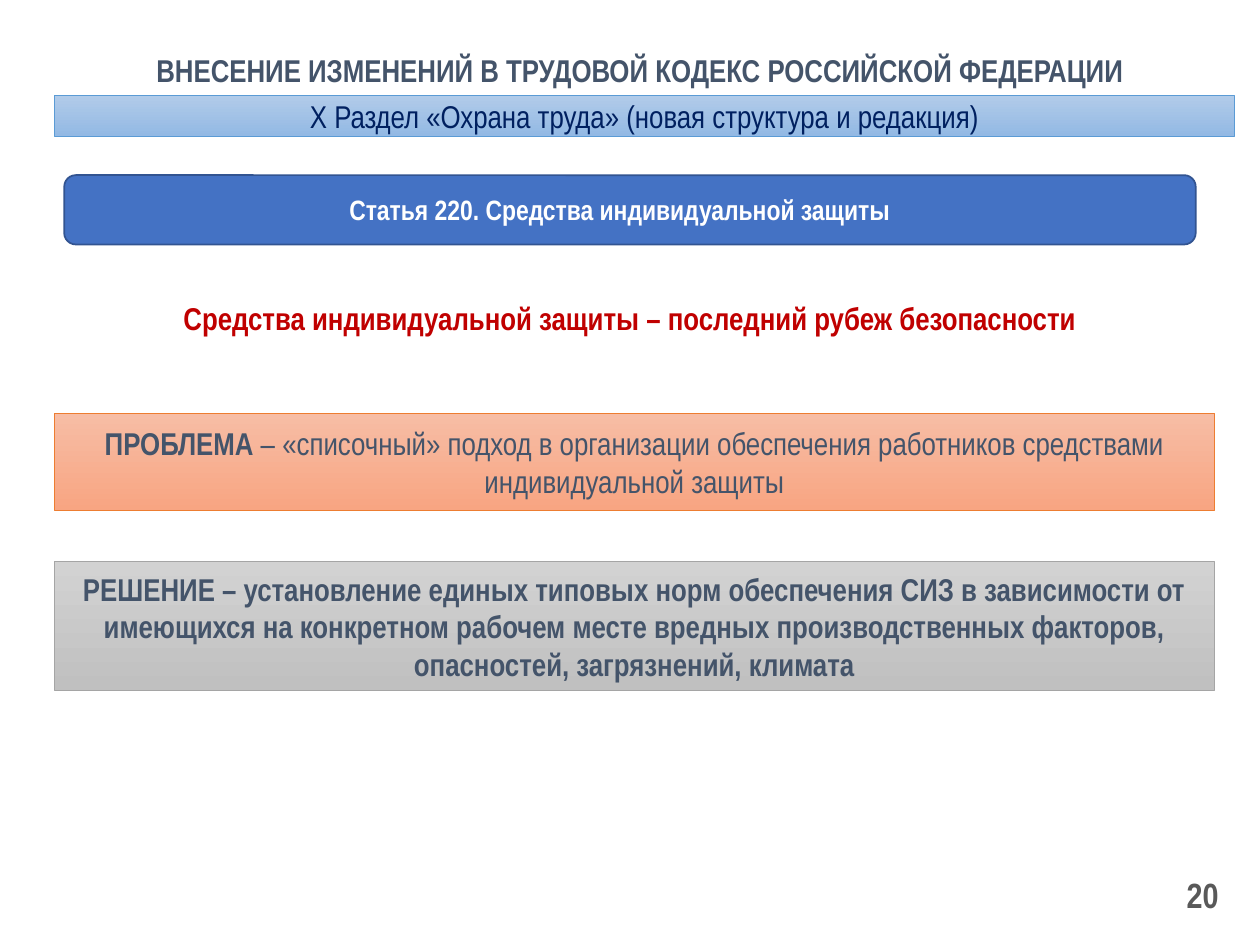
from pptx import Presentation
from pptx.dml.color import RGBColor
from pptx.enum import shapes, text
from pptx.util import Inches, Pt

SLATE = RGBColor(0x44, 0x54, 0x6A)
NAVY = RGBColor(0x00, 0x20, 0x60)
RED = RGBColor(0xC0, 0x00, 0x00)
GREY = RGBColor(0x59, 0x59, 0x59)
WHITE = RGBColor(0xFF, 0xFF, 0xFF)
ARTICLE_FILL = RGBColor(0x44, 0x72, 0xC4)
ARTICLE_LINE = RGBColor(0x32, 0x54, 0x91)
# Band colours: gradient top, gradient bottom, outline
BLUE_BAND = RGBColor(0xB1, 0xCB, 0xE9), RGBColor(0x93, 0xB9, 0xE4), RGBColor(0x5B, 0x9B, 0xD5)
ORANGE_BAND = RGBColor(0xF7, 0xBD, 0xA5), RGBColor(0xF8, 0xA5, 0x82), RGBColor(0xED, 0x7D, 0x31)
GREY_BAND = RGBColor(0xD2, 0xD2, 0xD2), RGBColor(0xC0, 0xC0, 0xC0), RGBColor(0xA5, 0xA5, 0xA5)

CENTER = text.PP_ALIGN.CENTER
MIDDLE = text.MSO_ANCHOR.MIDDLE


def write(box, spans, color, size=18, align=CENTER, anchor=MIDDLE):
    """Fill a box with one paragraph of (wording, bold) spans."""
    frame = box.text_frame
    frame.word_wrap = True
    frame.vertical_anchor = anchor
    para = frame.paragraphs[0]
    para.alignment = align
    for wording, bold in spans:
        span = para.add_run()
        span.text = wording
        span.font.name = "Arial Narrow"
        span.font.size = Pt(size)
        span.font.bold = bold
        span.font.color.rgb = color
    return para


deck = Presentation()
deck.slide_width, deck.slide_height = Inches(10), Inches(7.5)
page = deck.slides.add_slide(deck.slide_layouts[6])

# Title
title = page.shapes.add_textbox(Inches(0.83), Inches(0.13), Inches(8.5), Inches(0.63))
para = write(title, [("ВНЕСЕНИЕ ИЗМЕНЕНИЙ В ТРУДОВОЙ КОДЕКС РОССИЙСКОЙ ФЕДЕРАЦИИ", True)],
             SLATE, anchor=text.MSO_ANCHOR.BOTTOM)
para.line_spacing = 0.9

# Gradient bands: section, problem, solution
bands = [
    (0.76, 9.37, 0.32, BLUE_BAND, NAVY,
     [("Х Раздел «Охрана труда» (новая структура и редакция)", False)]),
    (3.28, 9.21, 0.77, ORANGE_BAND, SLATE,
     [("ПРОБЛЕМА", True),
      (" – «списочный» подход в организации обеспечения работников "
       "средствами индивидуальной защиты", False)]),
    (4.46, 9.21, 1.02, GREY_BAND, SLATE,
     [("РЕШЕНИЕ – установление единых типовых норм обеспечения СИЗ в зависимости от "
       "имеющихся на конкретном рабочем месте вредных производственных факторов, "
       "опасностей, загрязнений, климата", True)]),
]
for top, width, height, (light, dark, outline), color, spans in bands:
    band = page.shapes.add_shape(shapes.MSO_SHAPE.RECTANGLE, Inches(0.43), Inches(top),
                                 Inches(width), Inches(height))
    band.shadow.inherit = False
    band.fill.gradient()
    band.fill.gradient_angle = 270
    for stop, shade in zip(band.fill.gradient_stops, (light, dark)):
        stop.color.rgb = shade
    band.line.color.rgb = outline
    band.line.width = Pt(0.5)
    write(band, spans, color)

# Article heading, its text set slightly left of the middle
article = page.shapes.add_shape(shapes.MSO_SHAPE.ROUNDED_RECTANGLE, Inches(0.51), Inches(1.39),
                                Inches(8.98), Inches(0.55))
article.shadow.inherit = False
article.fill.solid()
article.fill.fore_color.rgb = ARTICLE_FILL
article.line.color.rgb = ARTICLE_LINE
article.line.width = Pt(1)
write(article, [("Статья 220. Средства индивидуальной защиты", True)], WHITE, size=16)
article.text_frame.margin_right = Inches(0.26)

# Key message, without fill or outline
message = page.shapes.add_shape(shapes.MSO_SHAPE.ROUNDED_RECTANGLE, Inches(0.59), Inches(2.25),
                                Inches(8.82), Inches(0.55))
message.shadow.inherit = False
message.fill.background()
message.line.fill.background()
write(message, [("Средства индивидуальной защиты – последний рубеж безопасности", True)], RED)

# Page number
number = page.shapes.add_textbox(Inches(7.44), Inches(6.9), Inches(2.33), Inches(0.4))
write(number, [("20", True)], GREY, size=20, align=text.PP_ALIGN.RIGHT)

deck.save("out.pptx")
